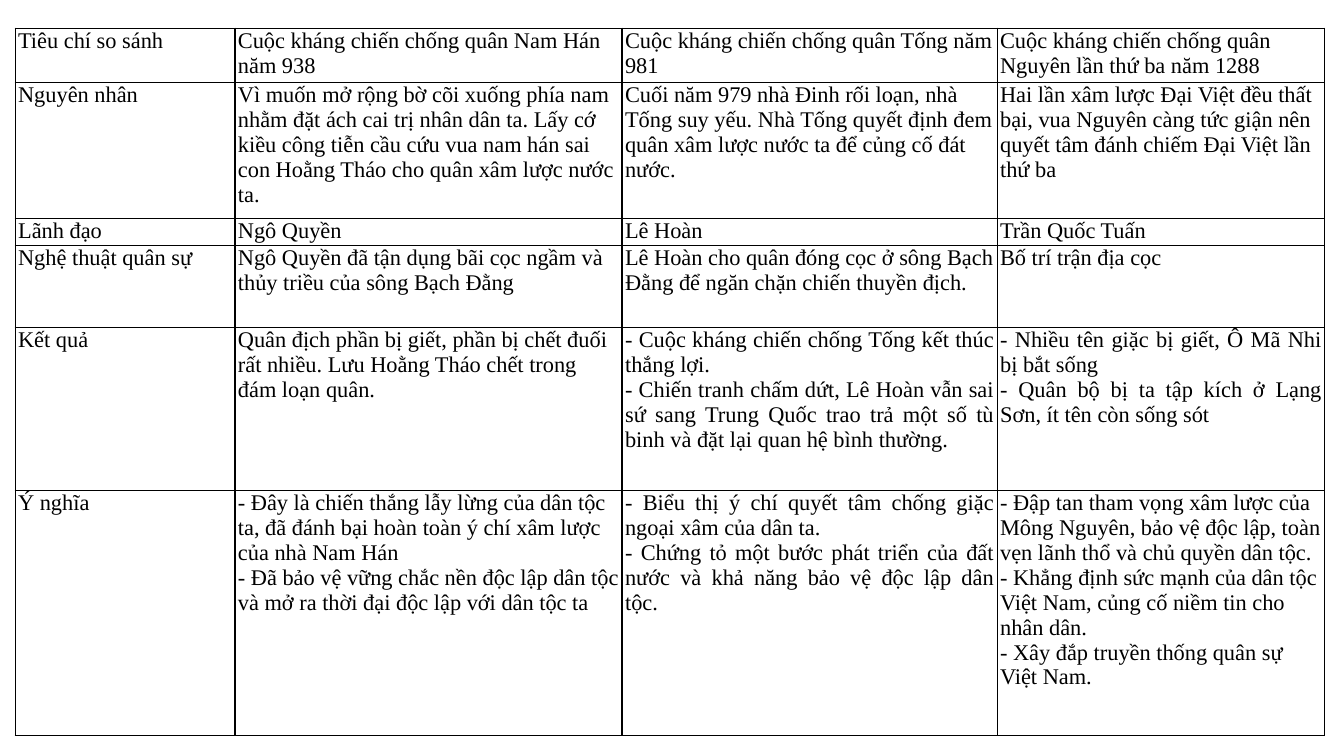
from dataclasses import dataclass

from lxml.etree import SubElement
from pptx import Presentation
from pptx.dml.color import RGBColor
from pptx.enum.text import PP_ALIGN
from pptx.oxml.ns import qn
from pptx.util import Pt

PX = 9144  # one hundredth of an inch


@dataclass(frozen=True)
class Theme:
    font: str = "Times New Roman"
    size: int = 16
    ink: str = "000000"
    paper: str = "FFFFFF"
    rule: int = 1


THEME = Theme()
COLS = [218, 384, 372, 325]
LINE = 27
LINES = [2, 5, 1, 3, 6, 9]  # row heights, in text lines

# Each cell is a list of paragraphs.
ROWS = [
    [
        ["Tiêu chí so sánh"],
        ["Cuộc kháng chiến chống quân Nam Hán năm 938"],
        ["Cuộc kháng chiến chống quân Tống năm 981"],
        ["Cuộc kháng chiến chống quân Nguyên lần thứ ba năm 1288"],
    ],
    [
        ["Nguyên nhân"],
        ["Vì muốn mở rộng bờ cõi xuống phía nam nhằm đặt ách cai trị nhân dân ta. "
         "Lấy cớ kiều công tiễn cầu cứu vua nam hán sai con Hoằng Tháo cho quân "
         "xâm lược nước ta."],
        ["Cuối năm 979 nhà Đinh rối loạn, nhà Tống suy yếu. Nhà Tống quyết định "
         "đem quân xâm lược nước ta để củng cố đát nước."],
        ["Hai lần xâm lược Đại Việt đều thất bại, vua Nguyên càng tức giận nên "
         "quyết tâm đánh chiếm Đại Việt lần thứ ba"],
    ],
    [["Lãnh đạo"], ["Ngô Quyền"], ["Lê Hoàn"], ["Trần Quốc Tuấn"]],
    [
        ["Nghệ thuật quân sự"],
        ["Ngô Quyền đã tận dụng bãi cọc ngầm và thủy triều của sông Bạch Đằng"],
        ["Lê Hoàn cho quân đóng cọc ở sông Bạch Đằng để ngăn chặn chiến thuyền địch."],
        ["Bố trí trận địa cọc"],
    ],
    [
        ["Kết quả"],
        ["Quân địch phần bị giết, phần bị chết đuối rất nhiều. Lưu Hoằng Tháo "
         "chết trong đám loạn quân."],
        ["- Cuộc kháng chiến chống Tống kết thúc thắng lợi.",
         "- Chiến tranh chấm dứt, Lê Hoàn vẫn sai sứ sang Trung Quốc trao trả "
         "một số tù binh và đặt lại quan hệ bình thường."],
        ["- Nhiều tên giặc bị giết, Ô Mã Nhi bị bắt sống",
         "- Quân bộ bị ta tập kích ở Lạng Sơn, ít tên còn sống sót"],
    ],
    [
        ["Ý nghĩa"],
        ["- Đây là chiến thắng lẫy lừng của dân tộc ta, đã đánh bại hoàn toàn ý "
         "chí xâm lược của nhà Nam Hán",
         "- Đã bảo vệ vững chắc nền độc lập dân tộc và mở ra thời đại độc lập "
         "với dân tộc ta"],
        ["- Biểu thị ý chí quyết tâm chống giặc ngoại xâm của dân ta.",
         "- Chứng tỏ một bước phát triển của đất nước và khả năng bảo vệ độc "
         "lập dân tộc."],
        ["- Đập tan tham vọng xâm lược của Mông Nguyên, bảo vệ độc lập, toàn vẹn "
         "lãnh thổ và chủ quyền dân tộc.",
         "- Khẳng định sức mạnh của dân tộc Việt Nam, củng cố niềm tin cho nhân dân.",
         "- Xây đắp truyền thống quân sự Việt Nam."],
    ],
]
JUST = {(4, 2), (4, 3), (5, 2)}  # row and column of justified cells


def frame(cell):
    """Rule all four sides of a cell, then fill it."""
    props = cell._tc.get_or_add_tcPr()
    for side in ("lnL", "lnR", "lnT", "lnB"):
        line = SubElement(props, qn(f"a:{side}"), w=str(Pt(THEME.rule)))
        fill = SubElement(line, qn("a:solidFill"))
        SubElement(fill, qn("a:srgbClr"), val=THEME.ink)
    cell.fill.solid()
    cell.fill.fore_color.rgb = RGBColor.from_string(THEME.paper)


def write(cell, paras, align):
    cell.margin_left = cell.margin_right = 3 * PX
    cell.margin_top = cell.margin_bottom = 0
    body = cell.text_frame
    for i, text in enumerate(paras):
        para = body.add_paragraph() if i else body.paragraphs[0]
        para.alignment = align
        run = para.add_run()
        run.text = text
        run.font.name = THEME.font
        run.font.size = Pt(THEME.size)
        run.font.color.rgb = RGBColor.from_string(THEME.ink)


def compare(slide, left, top, width, height):
    """Place the table that compares the three wars."""
    shape = slide.shapes.add_table(len(ROWS), len(COLS), left * PX, top * PX,
                                   width * PX, height * PX)
    table = shape.table
    table.first_row = table.horz_banding = False
    for col, wide in zip(table.columns, COLS):
        col.width = wide * PX
    for r, (row, count) in enumerate(zip(table.rows, LINES)):
        row.height = count * LINE * PX
        for c, cell in enumerate(row.cells):
            frame(cell)
            just = (r, c) in JUST
            write(cell, ROWS[r][c], PP_ALIGN.JUSTIFY if just else PP_ALIGN.LEFT)


def main():
    deck = Presentation()
    deck.slide_width, deck.slide_height = 1333 * PX, 750 * PX
    slide = deck.slides.add_slide(deck.slide_layouts[6])
    compare(slide, 15, 28, sum(COLS), sum(LINES) * LINE)
    deck.save("out.pptx")


if __name__ == "__main__":
    main()
